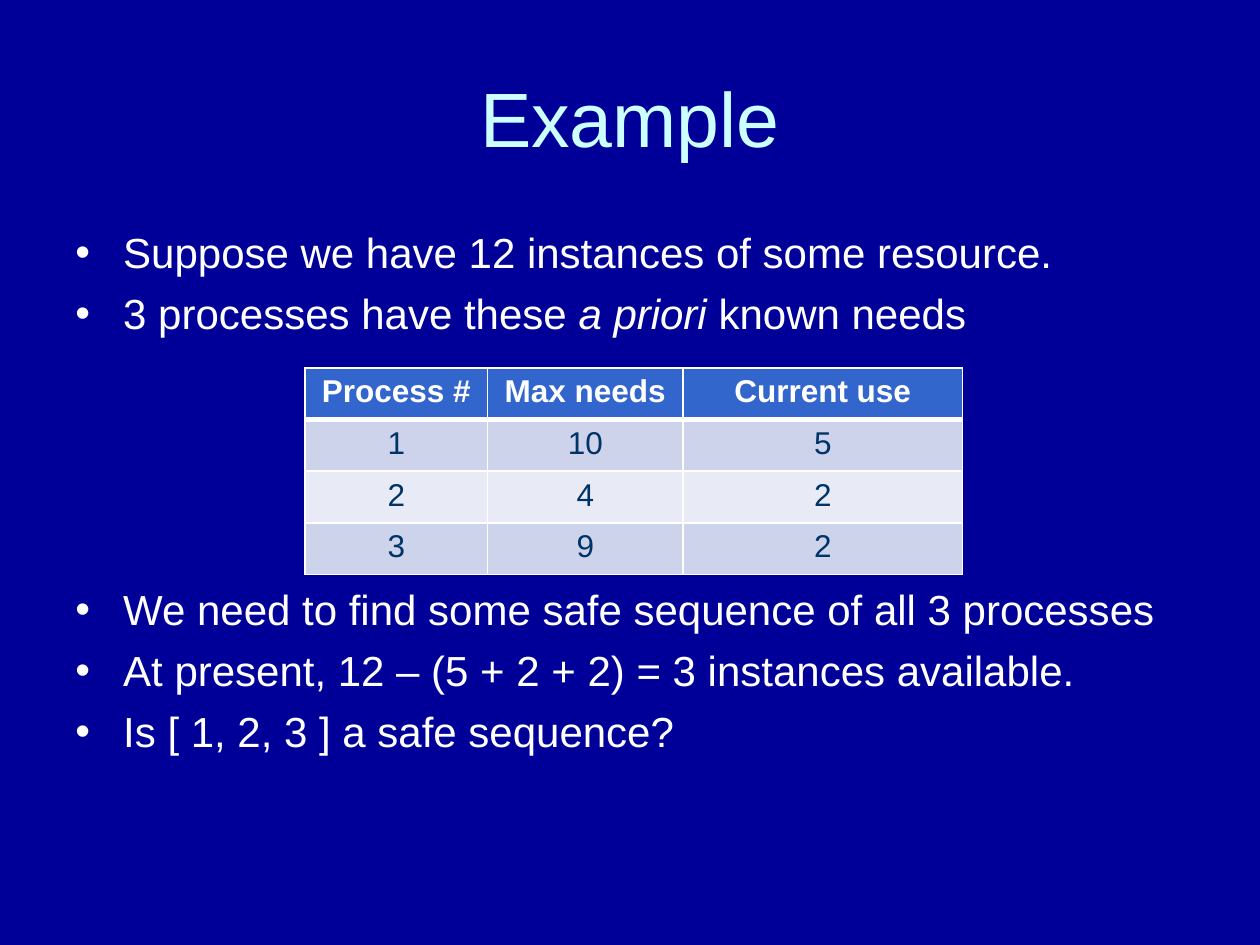
from dataclasses import dataclass

from lxml.etree import SubElement
from pptx import Presentation
from pptx.dml.color import RGBColor
from pptx.enum.text import MSO_ANCHOR as Anchor, PP_ALIGN as Align
from pptx.oxml.ns import qn
from pptx.util import Inches, Pt

WHITE = "FFFFFF"
BODY = {"name": "Arial", "size": Pt(24)}
HEAD = {"name": "Arial", "size": Pt(18), "bold": True}
DATA = {"name": "Arial", "size": Pt(18), "bold": False}
GAP = 6  # points above a bullet
BREAK = 140.4  # points above the bullet that follows the table


@dataclass
class Bullet:
    texts: list[tuple[str, bool]]  # text, italic
    above: float = GAP


BULLETS = [
    Bullet([("Suppose we have 12 instances of some resource.", False)]),
    Bullet([("3 processes have these ", False), ("a priori ", True),
            ("known needs", False)]),
    Bullet([("We need to find some safe sequence of all 3 processes", False)],
           BREAK),
    Bullet([("At present, 12 – (5 + 2 + 2) = 3 instances available.", False)]),
    Bullet([("Is [ 1, 2, 3 ] a safe sequence?", False)]),
]
NEEDS = [
    ("Process #", "Max needs", "Current use"),
    ("1", "10", "5"),
    ("2", "4", "2"),
    ("3", "9", "2"),
]
WIDTHS = [1.45, 1.55, 2.22]
ROW = 0.41


def paint(color, value: str) -> None:
    color.rgb = RGBColor.from_string(value)


def style(font, form: dict, value: str) -> None:
    for key, val in form.items():
        setattr(font, key, val)
    paint(font.color, value)


def add_bullet(para, item: Bullet) -> None:
    para.space_before = Pt(item.above)
    props = para._p.get_or_add_pPr()
    props.set("marL", str(Inches(0.38)))
    props.set("indent", str(-Inches(0.38)))
    SubElement(props, qn("a:buFont"), typeface="Arial")
    SubElement(props, qn("a:buChar"), char="•")
    for text, slant in item.texts:
        run = para.add_run()
        run.text = text
        style(run.font, BODY | {"italic": slant}, WHITE)


def add_edges(cell, top: float, base: float) -> None:
    props = cell._tc.get_or_add_tcPr()
    for side, width in {"L": 1, "R": 1, "T": top, "B": base}.items():
        line = SubElement(props, qn(f"a:ln{side}"), w=str(Pt(width)))
        fill = SubElement(line, qn("a:solidFill"))
        SubElement(fill, qn("a:srgbClr"), val=WHITE)


def fill_cell(cell, text: str, row: int) -> None:
    add_edges(cell, 3 if row == 1 else 1, 3 if row == 0 else 1)
    cell.fill.solid()
    back = "3366CC" if row == 0 else "CED3EC" if row % 2 else "E8EAF6"
    paint(cell.fill.fore_color, back)
    para = cell.text_frame.paragraphs[0]
    para.alignment = Align.CENTER
    run = para.add_run()
    run.text = text
    style(run.font, DATA if row else HEAD, "003366" if row else WHITE)


def main() -> None:
    deck = Presentation()
    deck.slide_width, deck.slide_height = Inches(10), Inches(7.5)
    slide = deck.slides.add_slide(deck.slide_layouts[5])
    slide.background.fill.solid()
    paint(slide.background.fill.fore_color, "000099")

    # Title
    title = slide.shapes.title
    title.left, title.top = Inches(0.5), Inches(0.3)
    title.width, title.height = Inches(9), Inches(1.25)
    title.text_frame.text = "Example"
    title.text_frame.vertical_anchor = Anchor.MIDDLE
    para = title.text_frame.paragraphs[0]
    para.alignment = Align.CENTER
    style(para.runs[0].font, {"name": "Arial", "size": Pt(44)}, "CCFFFF")

    # Bullets, with room for the table
    box = slide.shapes.add_textbox(
        Inches(0.5), Inches(1.75), Inches(9), Inches(4.95))
    frame = box.text_frame
    frame.word_wrap = True
    for i, item in enumerate(BULLETS):
        add_bullet(frame.add_paragraph() if i else frame.paragraphs[0], item)

    # Table of needs
    table = slide.shapes.add_table(
        len(NEEDS), len(WIDTHS), Inches(2.42), Inches(2.92),
        Inches(sum(WIDTHS)), Inches(ROW * len(NEEDS))).table
    for col, width in zip(table.columns, WIDTHS):
        col.width = Inches(width)
    for r, texts in enumerate(NEEDS):
        table.rows[r].height = Inches(ROW)
        for c, text in enumerate(texts):
            fill_cell(table.cell(r, c), text, r)

    deck.save("out.pptx")


if __name__ == "__main__":
    main()
